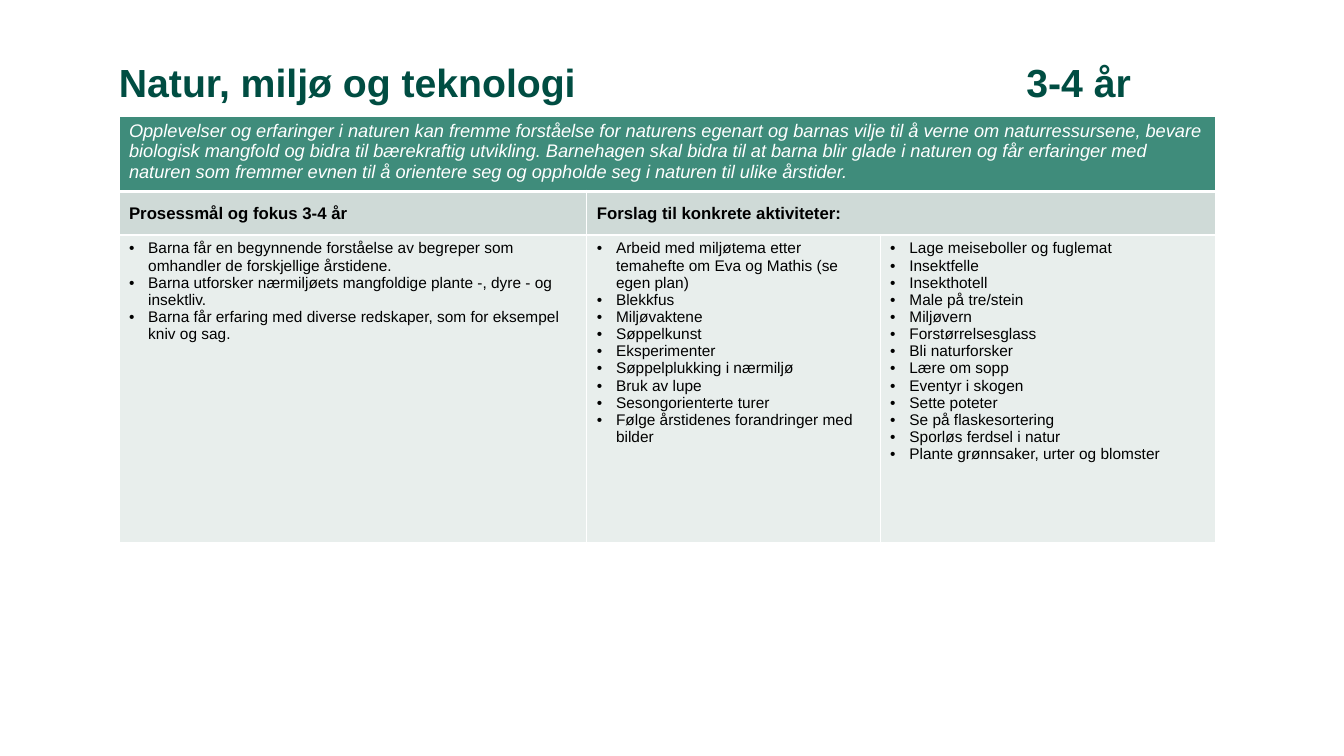
import pptx
import pptx.dml.color
import pptx.enum.text
import pptx.oxml
import pptx.oxml.ns
import pptx.util
from pptx.util import Inches

RGB = pptx.dml.color.RGBColor
DARK = RGB(0x00, 0x4D, 0x42)
GREEN = RGB(0x3F, 0x8C, 0x7B)
SAGE = RGB(0xCF, 0xDA, 0xD7)
PALE = RGB(0xE8, 0xEE, 0xEC)
WHITE = RGB(0xFF, 0xFF, 0xFF)
BLACK = RGB(0x00, 0x00, 0x00)
MIDDLE = pptx.enum.text.MSO_ANCHOR.MIDDLE
TOP = pptx.enum.text.MSO_ANCHOR.TOP

INTRO = (
    "Opplevelser og erfaringer i naturen kan fremme forståelse for naturens egenart "
    "og barnas vilje til å verne om naturressursene, bevare biologisk mangfold og bidra "
    "til bærekraftig utvikling. Barnehagen skal bidra til at barna blir glade i naturen "
    "og får erfaringer med naturen som fremmer evnen til å orientere seg og oppholde seg "
    "i naturen til ulike årstider."
)
HEADS = ["Prosessmål og fokus 3-4 år", "Forslag til konkrete aktiviteter:"]
LISTS = [
    [
        "Barna får en begynnende forståelse av begreper som omhandler de forskjellige årstidene.",
        "Barna utforsker nærmiljøets mangfoldige plante -, dyre - og insektliv.",
        "Barna får erfaring med diverse redskaper, som for eksempel kniv og sag.",
    ],
    [
        "Arbeid med miljøtema etter temahefte om Eva og Mathis (se egen plan)",
        "Blekkfus",
        "Miljøvaktene",
        "Søppelkunst",
        "Eksperimenter",
        "Søppelplukking i nærmiljø",
        "Bruk av lupe",
        "Sesongorienterte turer",
        "Følge årstidenes forandringer med bilder",
    ],
    [
        "Lage meiseboller og fuglemat",
        "Insektfelle",
        "Insekthotell",
        "Male på tre/stein",
        "Miljøvern",
        "Forstørrelsesglass",
        "Bli naturforsker",
        "Lære om sopp",
        "Eventyr i skogen",
        "Sette poteter",
        "Se på flaskesortering",
        "Sporløs ferdsel i natur",
        "Plante grønnsaker, urter og blomster",
    ],
]
COLS = [4.64, 2.91, 3.33]
ROWS = [0.75, 0.43, 3.05]


def element(xml):
    return pptx.oxml.parse_xml(xml.replace(">", f" {pptx.oxml.ns.nsdecls('a')}>", 1))


def write(frame, text, size, color, bold=False, italic=False,
          bullet=False, tab=None, spacing=None):
    """Fill a text frame with one paragraph per line of text."""
    for i, line in enumerate(text.split("\n")):
        para = frame.paragraphs[0] if i == 0 else frame.add_paragraph()
        props = para._p.get_or_add_pPr()
        if bullet:
            props.set("marL", str(Inches(0.19)))
            props.set("indent", str(-Inches(0.19)))
            props.append(element('<a:buFont typeface="Arial"></a:buFont>'))
            props.append(element('<a:buChar char="•"></a:buChar>'))
        if tab:
            props.append(element(
                f'<a:tabLst><a:tab pos="{Inches(tab)}" algn="l"/></a:tabLst>'))
        if spacing:
            para.line_spacing = spacing
        run = para.add_run()
        run.text = line
        font = run.font
        font.name, font.size = "Arial", pptx.util.Pt(size)
        font.bold, font.italic = bold, italic
        font.color.rgb = color


def edge(cell, top, bottom):
    """White cell borders; widths in points."""
    props = cell._tc.get_or_add_tcPr()
    for side, width in (("L", 1), ("R", 1), ("T", top), ("B", bottom)):
        props.append(element(
            f'<a:ln{side} w="{pptx.util.Pt(width)}"><a:solidFill>'
            f'<a:srgbClr val="{WHITE}"/></a:solidFill></a:ln{side}>'))


def title(slide, left, top, width, height):
    box = slide.shapes.add_textbox(*map(Inches, (left, top, width, height)))
    frame = box.text_frame
    frame.word_wrap = True
    frame.vertical_anchor = MIDDLE
    frame.margin_left = frame.margin_right = 0
    frame.margin_top = frame.margin_bottom = 0
    write(frame, "Natur, miljø og teknologi\t3-4 år", 28, DARK,
          bold=True, tab=9, spacing=0.9)


def plan(slide, left, top):
    size = (left, top, sum(COLS), sum(ROWS))
    table = slide.shapes.add_table(len(ROWS), len(COLS), *map(Inches, size)).table
    table.first_row = table.horz_banding = False
    for col, width in zip(table.columns, COLS):
        col.width = Inches(width)
    for row, height in zip(table.rows, ROWS):
        row.height = Inches(height)

    # Borders and fills, with a thick rule under the intro
    for r, (fill, above, below) in enumerate([(GREEN, 1, 3), (SAGE, 3, 1), (PALE, 1, 1)]):
        for cell in table.rows[r].cells:
            edge(cell, above, below)
            cell.fill.solid()
            cell.fill.fore_color.rgb = fill
            cell.vertical_anchor = MIDDLE if r == 1 else TOP

    # Intro across all columns
    table.cell(0, 0).merge(table.cell(0, 2))
    write(table.cell(0, 0).text_frame, INTRO, 13, WHITE, italic=True)

    # Headings, the second over both activity columns
    table.cell(1, 1).merge(table.cell(1, 2))
    for c, head in enumerate(HEADS):
        write(table.cell(1, c).text_frame, head, 12, BLACK, bold=True)

    # Bulleted lists
    for c, items in enumerate(LISTS):
        write(table.cell(2, c).text_frame, "\n".join(items), 11, BLACK, bullet=True)


def main():
    deck = pptx.Presentation()
    deck.slide_width, deck.slide_height = Inches(13.33), Inches(7.5)
    slide = deck.slides.add_slide(deck.slide_layouts[6])
    title(slide, 1.18, 0.54, 11.5, 0.61)
    plan(slide, 1.18, 1.15)
    deck.save("out.pptx")


if __name__ == "__main__":
    main()
